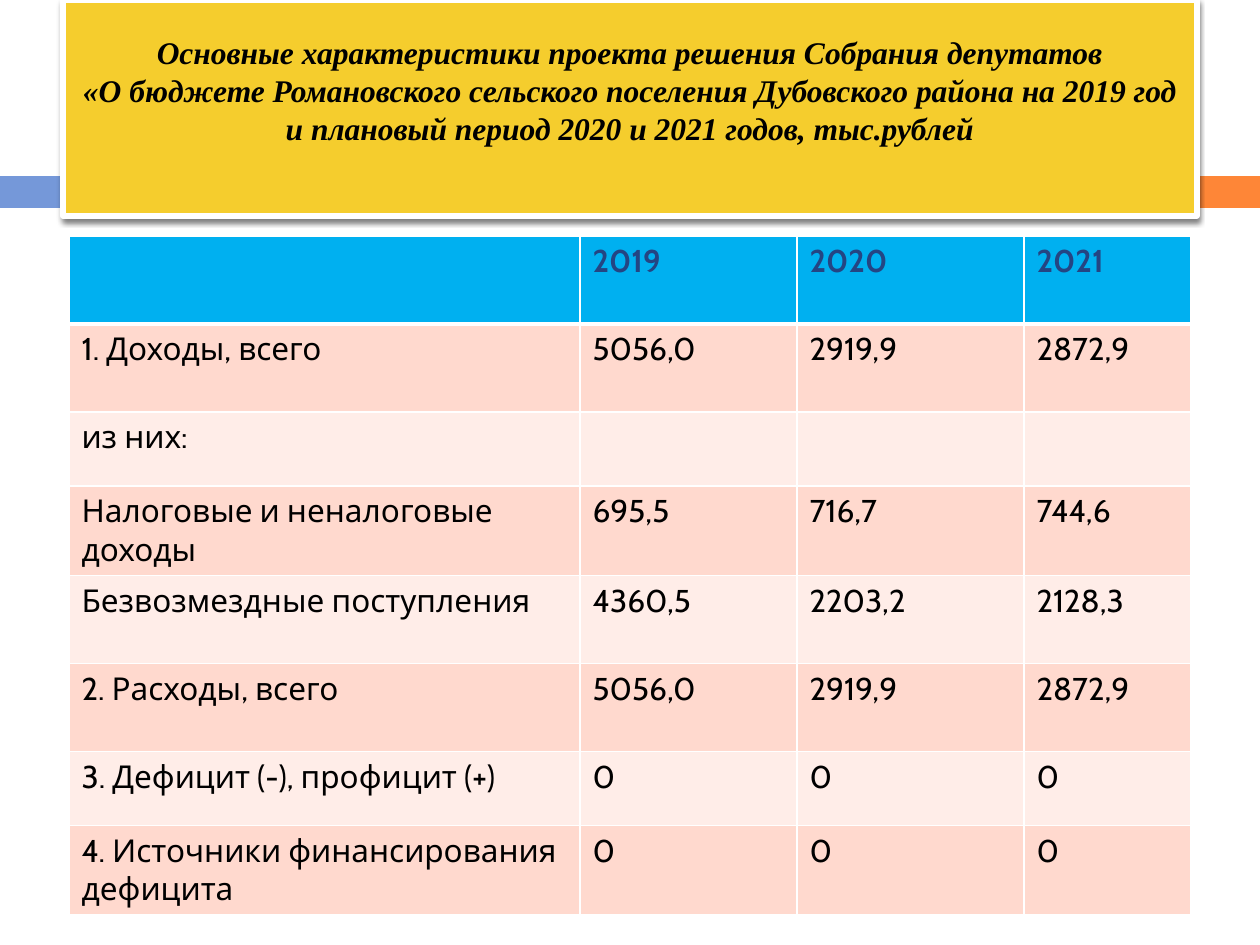
from lxml.etree import SubElement
from pptx import Presentation
from pptx.dml.color import RGBColor
from pptx.enum.shapes import MSO_SHAPE
from pptx.enum.text import MSO_ANCHOR, PP_ALIGN
from pptx.oxml.ns import qn
from pptx.util import Emu, Pt

EMU_PER_INCH = 914400
PX_PER_INCH = 126

COLORS = {
    "blue": "7598D9",
    "orange": "FE8637",
    "yellow": "F5CD2D",
    "white": "FFFFFF",
    "black": "000000",
    "header": "00B0F0",
    "header text": "244583",
    "dark band": "FFD9CE",
    "light band": "FFEDE8",
}

TITLE_FORMAT = {"name": "Times New Roman", "size": Pt(18), "bold": True, "italic": True}
HEADER_FORMAT = {"name": "Cabin", "size": Pt(18), "bold": True}
BODY_FORMAT = {"name": "Cabin", "size": Pt(18), "bold": False}

TITLE = (
    "Основные характеристики проекта решения Собрания депутатов\v"
    "«О бюджете Романовского сельского поселения Дубовского района "
    "на 2019 год и плановый период 2020 и 2021 годов, тыс.рублей"
)

BUDGET_ROWS = [
    ("", "2019", "2020", "2021"),
    ("1. Доходы, всего", "5056,0", "2919,9", "2872,9"),
    ("из них:", "", "", ""),
    ("Налоговые и неналоговые доходы", "695,5", "716,7", "744,6"),
    ("Безвозмездные поступления", "4360,5", "2203,2", "2128,3"),
    ("2. Расходы, всего", "5056,0", "2919,9", "2872,9"),
    ("3. Дефицит (-), профицит (+)", "0", "0", "0"),
    ("4. Источники финансирования дефицита", "0", "0", "0"),
]
COLUMN_WIDTHS = [511, 217, 227, 167]
TALL_ROW, SHORT_ROW = 88, 74
ROW_HEIGHTS = [SHORT_ROW if index in (2, 6) else TALL_ROW for index in range(len(BUDGET_ROWS))]


def px(value):
    return Emu(round(value * EMU_PER_INCH / PX_PER_INCH))


def rgb(name):
    return RGBColor.from_string(COLORS[name])


class SlideBuilder:
    def __init__(self, slide):
        self.slide = slide

    def format_text(self, paragraph, text, format_values, color):
        paragraph.text = text
        for font in [paragraph.font] + [run.font for run in paragraph.runs]:
            for attribute, value in format_values.items():
                setattr(font, attribute, value)
            font.color.rgb = rgb(color)

    def rectangle(self, left, top, width, height, fill):
        shape = self.slide.shapes.add_shape(
            MSO_SHAPE.RECTANGLE, px(left), px(top), px(width), px(height))
        shape.shadow.inherit = False
        shape.fill.solid()
        shape.fill.fore_color.rgb = rgb(fill)
        shape.line.fill.background()
        return shape

    def shadow(self, shape, blur, distance, opacity):
        effects = shape.element.spPr.find(qn("a:effectLst"))
        outer = SubElement(effects, qn("a:outerShdw"), blurRad=str(Pt(blur)),
                           dist=str(Pt(distance)), dir="5400000", rotWithShape="0")
        color = SubElement(outer, qn("a:srgbClr"), val=COLORS["black"])
        SubElement(color, qn("a:alpha"), val=str(opacity * 1000))

    def title(self, left, top, width, height, text):
        shape = self.rectangle(left, top, width, height, "yellow")
        shape.line.color.rgb = rgb("white")
        shape.line.width = Pt(3)
        self.shadow(shape, blur=3, distance=2, opacity=50)
        frame = shape.text_frame
        frame_values = {
            "word_wrap": True, "vertical_anchor": MSO_ANCHOR.MIDDLE,
            "margin_left": px(13), "margin_right": px(13),
            "margin_top": px(6), "margin_bottom": px(42),
        }
        for attribute, value in frame_values.items():
            setattr(frame, attribute, value)
        paragraph = frame.paragraphs[0]
        paragraph.alignment = PP_ALIGN.CENTER
        self.format_text(paragraph, text, TITLE_FORMAT, "black")

    def borders(self, cell, widths):
        properties = cell._tc.get_or_add_tcPr()
        for side, width in widths.items():
            line = SubElement(properties, qn(f"a:ln{side}"), w=str(Pt(width)))
            fill = SubElement(line, qn("a:solidFill"))
            SubElement(fill, qn("a:srgbClr"), val=COLORS["white"])

    def table(self, left, top, rows, column_widths, row_heights):
        table = self.slide.shapes.add_table(
            len(rows), len(column_widths), px(left), px(top),
            px(sum(column_widths)), px(sum(row_heights))).table
        for column, width in zip(table.columns, column_widths):
            column.width = px(width)
        for row, height in zip(table.rows, row_heights):
            row.height = px(height)

        for row_index, values in enumerate(rows):
            if row_index == 0:
                fill, color, format_values = "header", "header text", HEADER_FORMAT
            else:
                fill = "dark band" if row_index % 2 else "light band"
                color, format_values = "black", BODY_FORMAT
            # The rule between the header and the body is heavier
            widths = {"L": 1, "R": 1, "T": 3 if row_index == 1 else 1,
                      "B": 3 if row_index == 0 else 1}
            for column_index, text in enumerate(values):
                cell = table.cell(row_index, column_index)
                self.borders(cell, widths)
                cell.fill.solid()
                cell.fill.fore_color.rgb = rgb(fill)
                self.format_text(cell.text_frame.paragraphs[0], text, format_values, color)


def main():
    presentation = Presentation()
    presentation.slide_width = px(1260)
    presentation.slide_height = px(945)
    builder = SlideBuilder(presentation.slides.add_slide(presentation.slide_layouts[6]))

    # Side bars behind the title
    builder.rectangle(0, 176, 73, 32, "blue")
    builder.rectangle(82, 176, 1178, 32, "orange")

    # Title panel
    builder.title(63, 0, 1134, 216, TITLE)

    # Budget table
    builder.table(69, 236, BUDGET_ROWS, COLUMN_WIDTHS, ROW_HEIGHTS)

    presentation.save("out.pptx")


if __name__ == "__main__":
    main()
